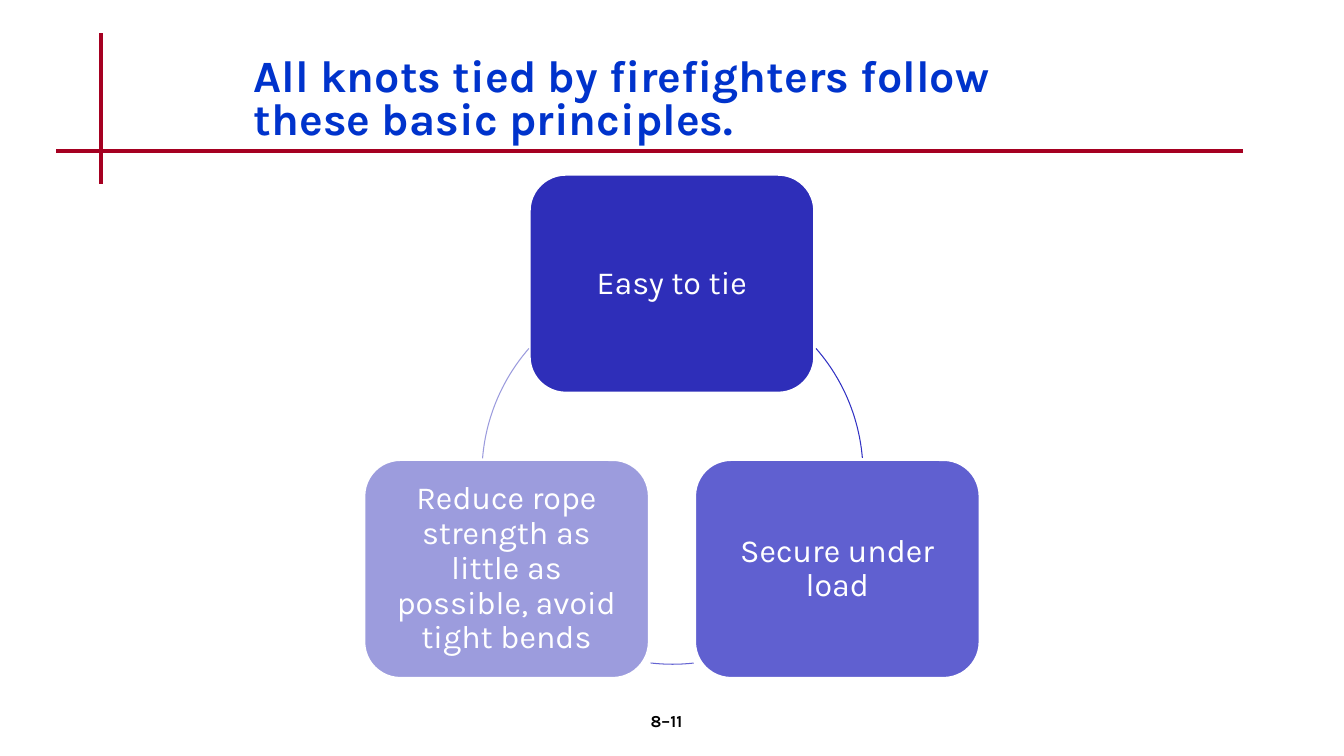
"""Build the slide on the basic principles of firefighters' knots."""
from lxml import etree
from pptx import Presentation
from pptx.dml.color import RGBColor
from pptx.enum.shapes import MSO_CONNECTOR, MSO_SHAPE
from pptx.enum.text import MSO_ANCHOR, PP_ALIGN
from pptx.oxml.ns import qn
from pptx.util import Inches, Pt

ROUND, ARC = MSO_SHAPE.ROUNDED_RECTANGLE, MSO_SHAPE.ARC
STRAIGHT = MSO_CONNECTOR.STRAIGHT
LEFT, CENTER = PP_ALIGN.LEFT, PP_ALIGN.CENTER
TOP, MIDDLE = MSO_ANCHOR.TOP, MSO_ANCHOR.MIDDLE

TITLE = "All knots tied by firefighters follow these basic principles."
PAGE = "8–11"
RULES = [(1, 0.33, 1, 1.83), (0.56, 1.5, 12.33, 1.5)]
PRINCIPLES = [
    ("Easy to tie", 5.25, 1.73, "2E2EB9"),
    ("Secure under load", 6.89, 4.56, "6060D0"),
    ("Reduce rope strength as little as possible, avoid tight bends",
     3.61, 4.56, "9C9CDD"),
]
ARCS = [(318.9, 355.4, "3131C3"), (83.6, 96.6, "6464D2"),
        (184.6, 221.1, "9B9BDD")]
BOX_W, BOX_H = 2.83, 2.17
RING = (4.78, 2.81, 3.78, 3.78)


def rgb(code):
    return RGBColor.from_string(code)


def set_line(sp, color, width):
    sp.line.color.rgb = rgb(color)
    sp.line.width = Pt(width)


def add_shape(kind, x, y, w, h, line, width, fill=None):
    sp = s.shapes.add_shape(kind, *map(Inches, (x, y, w, h)))
    sp.shadow.inherit = False
    if fill:
        sp.fill.solid()
        sp.fill.fore_color.rgb = rgb(fill)
    else:
        sp.fill.background()
    set_line(sp, line, width)
    return sp


def write(sp, text, size, color, bold=False, align=CENTER, anchor=MIDDLE,
          spacing=1.0, inset=None):
    tf = sp.text_frame
    tf.word_wrap = True
    tf.vertical_anchor = anchor
    if inset is not None:
        tf.margin_left = tf.margin_right = Inches(inset)
        tf.margin_top = tf.margin_bottom = Inches(inset)
    p = tf.paragraphs[0]
    p.alignment = align
    p.line_spacing = spacing
    r = p.add_run()
    r.text = text
    r.font.name = "Karla"
    r.font.size = Pt(size)
    r.font.bold = bold
    r.font.color.rgb = rgb(color)


def add_text(x, y, w, h, text, **fmt):
    write(s.shapes.add_textbox(*map(Inches, (x, y, w, h))), text, **fmt)


prs = Presentation()
prs.slide_width, prs.slide_height = Inches(13.33), Inches(7.5)
s = prs.slides.add_slide(prs.slide_layouts[6])

for ends in RULES:
    rule = s.shapes.add_connector(STRAIGHT, *map(Inches, ends))
    set_line(rule, "A50021", 3)
    etree.SubElement(rule._element.spPr, qn("a:effectLst"))

for (text, x, y, fill), (start, end, color) in zip(PRINCIPLES, ARCS):
    box = add_shape(ROUND, x, y, BOX_W, BOX_H, "FFFFFF", 2, fill)
    write(box, text, size=23, color="FFFFFF", spacing=0.9, inset=0.1)
    arc = add_shape(ARC, *RING, color, 0.75)
    arc.adjustments[0] = start * 0.6
    arc.adjustments[1] = end * 0.6

add_text(2.42, 0.5, 8.5, 1, TITLE, size=32, color="0033CC", bold=True,
         align=LEFT, spacing=0.8)
add_text(5.22, 7, 2.78, 0.5, PAGE, size=12, color="000000", bold=True,
         anchor=TOP)

prs.save("out.pptx")
